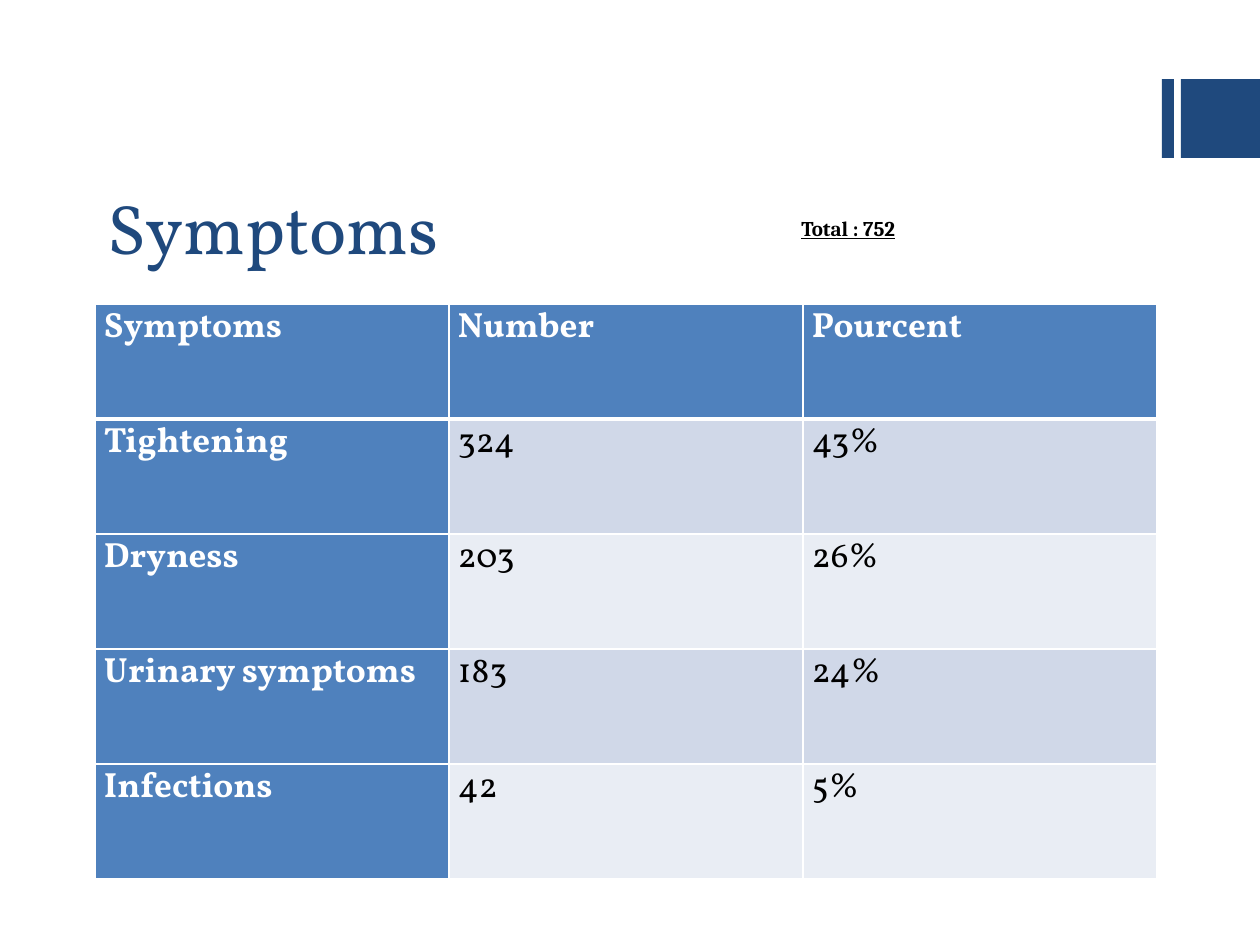
from dataclasses import dataclass

from lxml import etree
from pptx import Presentation
from pptx import util as u
from pptx.dml.color import RGBColor
from pptx.enum import shapes, text
from pptx.oxml import ns

PX_PER_INCH = 126


@dataclass(frozen=True)
class Theme:
    navy: str = "1F497D"
    blue: str = "4F81BD"
    bands: tuple = ("D0D8E8", "E9EDF4")
    white: str = "FFFFFF"
    black: str = "000000"
    main_font: str = "Vollkorn"
    note_font: str = "Cambria"
    title_size: int = 40
    table_size: int = 20
    note_size: int = 12


THEME = Theme()

SYMPTOMS = [
    ("Symptoms", "Number", "Pourcent"),
    ("Tightening", "324", "43%"),
    ("Dryness", "203", "26%"),
    ("Urinary symptoms", "183", "24%"),
    ("Infections", "42", "5%"),
]


def px(length):
    return u.Emu(round(length * u.Inches(1) / PX_PER_INCH))


def paint(fill, color):
    fill.solid()
    fill.fore_color.rgb = RGBColor.from_string(color)


def write(frame, wording, color, **font_format):
    run = frame.paragraphs[0].add_run()
    run.text = wording
    run.font.color.rgb = RGBColor.from_string(color)
    for name, value in font_format.items():
        setattr(run.font, name, value)


def set_borders(cell, color, bottom_width):
    """Outline a cell, with its own width for the bottom edge."""
    properties = cell._tc.get_or_add_tcPr()
    edges = {"lnL": 1, "lnR": 1, "lnT": 1, "lnB": bottom_width}
    for position, (edge, width) in enumerate(edges.items()):
        line = etree.Element(ns.qn(f"a:{edge}"), w=str(u.Pt(width)))
        solid = etree.SubElement(line, ns.qn("a:solidFill"))
        etree.SubElement(solid, ns.qn("a:srgbClr"), val=color)
        properties.insert(position, line)


def add_corner_mark(slide, left, top, width, height):
    """A thin bar and a square that ends at the slide's edge."""
    for offset, bar_width in ((0, 12), (width - height, height)):
        bar = slide.shapes.add_shape(
            shapes.MSO_SHAPE.RECTANGLE,
            px(left + offset), px(top), px(bar_width), px(height))
        bar.shadow.inherit = False
        paint(bar.fill, THEME.navy)
        bar.line.fill.background()


def add_label(slide, left, top, width, height, wording, color, anchor, **font_format):
    frame = slide.shapes.add_textbox(
        px(left), px(top), px(width), px(height)).text_frame
    frame.word_wrap = True
    frame.vertical_anchor = anchor
    write(frame, wording, color, **font_format)


def add_symptom_table(slide, left, top, width, height):
    table = slide.shapes.add_table(
        len(SYMPTOMS), len(SYMPTOMS[0]),
        px(left), px(top), px(width), px(height)).table
    for column in table.columns:
        column.width = px(width / len(SYMPTOMS[0]))
    margins = {"margin_left": px(9), "margin_right": px(9),
               "margin_top": 0, "margin_bottom": 0}
    for row, entries in enumerate(SYMPTOMS):
        table.rows[row].height = px(height / len(SYMPTOMS))
        for column, entry in enumerate(entries):
            cell = table.cell(row, column)
            heading = row == 0 or column == 0
            for name, value in margins.items():
                setattr(cell, name, value)
            paint(cell.fill, THEME.blue if heading else THEME.bands[(row - 1) % 2])
            set_borders(cell, THEME.white, 3 if row == 0 else 1)
            write(cell.text_frame, entry, THEME.white if heading else THEME.black,
                  name=THEME.main_font, size=u.Pt(THEME.table_size), bold=heading)


def main():
    deck = Presentation()
    deck.slide_width, deck.slide_height = px(1260), px(945)
    slide = deck.slides.add_slide(deck.slide_layouts[6])
    paint(slide.background.fill, THEME.white)

    add_corner_mark(slide, 1162, 79, 98, 79)
    add_label(slide, 95, 116, 1008, 159, "Symptoms", THEME.navy,
              text.MSO_ANCHOR.BOTTOM,
              name=THEME.main_font, size=u.Pt(THEME.title_size))
    add_symptom_table(slide, 95, 304, 1062, 575)
    add_label(slide, 789, 209, 300, 63, "Total : 752", THEME.black,
              text.MSO_ANCHOR.TOP, name=THEME.note_font,
              size=u.Pt(THEME.note_size), bold=True, underline=True)
    deck.save("out.pptx")


if __name__ == "__main__":
    main()
